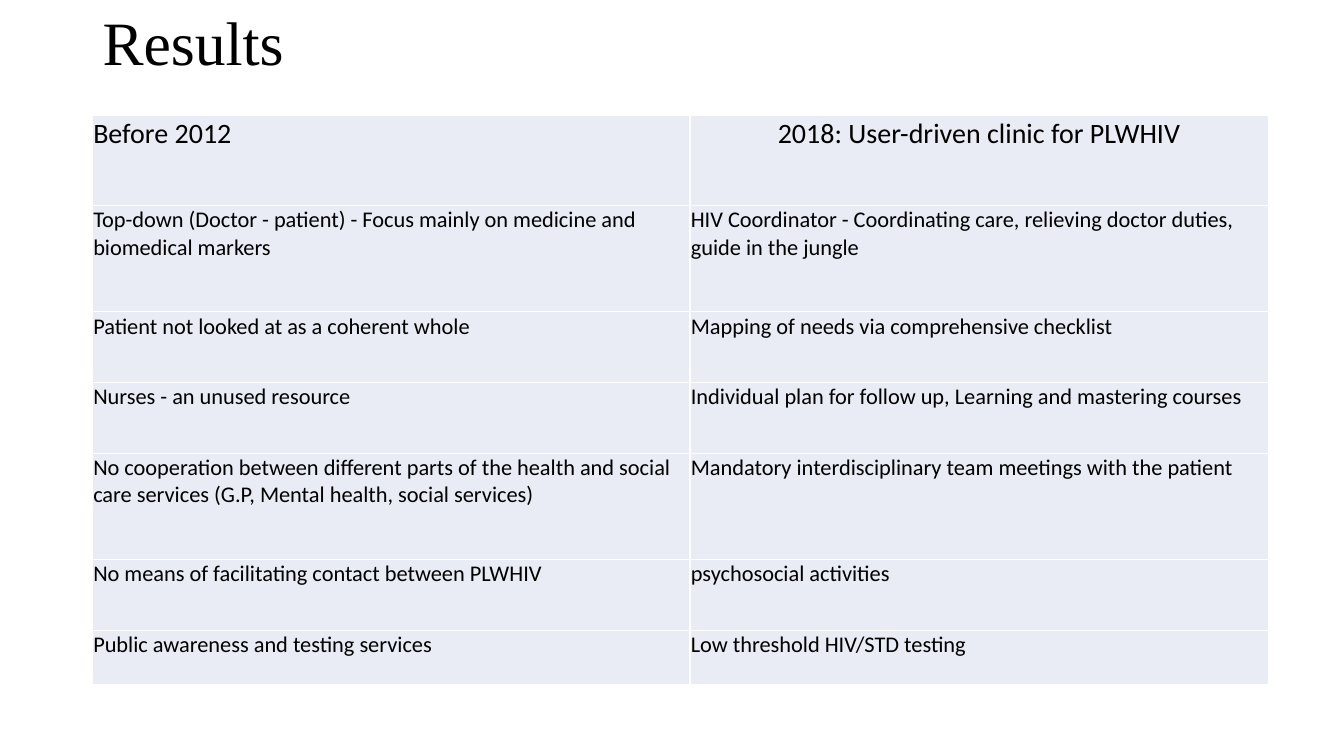
import pptx
import pptx.dml.color
import pptx.enum.text
import pptx.oxml
import pptx.oxml.ns
import pptx.util
from pptx.util import Cm

ALIGN = pptx.enum.text.PP_ALIGN
ANCHOR = pptx.enum.text.MSO_ANCHOR

COMPARISON = [
    ("Before 2012", "2018: User-driven clinic for PLWHIV"),
    ("Top-down (Doctor - patient) - Focus mainly on medicine and biomedical markers",
     "HIV Coordinator - Coordinating care, relieving doctor duties, guide in the jungle"),
    ("Patient not looked at as a coherent whole",
     "Mapping of needs via comprehensive checklist"),
    ("Nurses - an unused resource",
     "Individual plan for follow up, Learning and mastering courses"),
    ("No cooperation between different parts of the health and social care services "
     "(G.P, Mental health, social services)",
     "Mandatory interdisciplinary team meetings with the patient"),
    ("No means of facilitating contact between PLWHIV", "psychosocial activities"),
    ("Public awareness and testing services", "Low threshold HIV/STD testing"),
]
COLUMN_WIDTHS = [15.06, 14.57]
ROW_HEIGHTS = [2.26, 2.68, 1.78, 1.78, 2.68, 1.78, 1.37]


def color(hex_value):
    return pptx.dml.color.RGBColor.from_string(hex_value)


def write_text(text_frame, text, size=16, font="Calibri", fill="000000",
               align=ALIGN.LEFT, line_spacing=None):
    text_frame.word_wrap = True
    paragraph = text_frame.paragraphs[0]
    paragraph.alignment = align
    paragraph.line_spacing = line_spacing
    run = paragraph.add_run()
    run.text = text
    run.font.name = font
    run.font.size = pptx.util.Pt(size)
    run.font.bold = False
    run.font.color.rgb = color(fill)


class SlideBuilder:
    title_font = "Times New Roman"
    cell_fill = "E9EBF5"
    border = "FFFFFF"

    def __init__(self, presentation):
        self.slide = presentation.slides.add_slide(presentation.slide_layouts[5])

    def title(self, text, left, top, width, height):
        shape = self.slide.shapes.title
        shape.left, shape.top, shape.width, shape.height = map(Cm, (left, top, width, height))
        shape.text_frame.auto_size = pptx.enum.text.MSO_AUTO_SIZE.NONE
        shape.text_frame.vertical_anchor = ANCHOR.MIDDLE
        write_text(shape.text_frame, text, size=44, font=self.title_font, line_spacing=0.9)

    def cell_borders(self, cell):
        properties = cell._tc.get_or_add_tcPr()
        for side in ("lnL", "lnR", "lnT", "lnB"):
            properties.append(pptx.oxml.parse_xml(
                f'<a:{side} {pptx.oxml.ns.nsdecls("a")} w="12700"><a:solidFill>'
                f'<a:srgbClr val="{self.border}"/></a:solidFill></a:{side}>'))

    def table(self, rows, left, top, column_widths, row_heights):
        table = self.slide.shapes.add_table(
            len(rows), len(column_widths), Cm(left), Cm(top),
            Cm(sum(column_widths)), Cm(sum(row_heights))).table
        table.first_row = table.horz_banding = False
        for column, width in zip(table.columns, column_widths):
            column.width = Cm(width)
        for row, height in zip(table.rows, row_heights):
            row.height = Cm(height)
        for row_index, texts in enumerate(rows):
            is_header = row_index == 0
            for column_index, text in enumerate(texts):
                cell = table.cell(row_index, column_index)
                cell.margin_left = cell.margin_right = cell.margin_top = Cm(0.02)
                cell.margin_bottom = 0
                cell.vertical_anchor = ANCHOR.TOP
                self.cell_borders(cell)
                cell.fill.solid()
                cell.fill.fore_color.rgb = color(self.cell_fill)
                centred = is_header and column_index == 1
                write_text(cell.text_frame, text, size=20 if is_header else 16,
                           align=ALIGN.CENTER if centred else ALIGN.LEFT)


def main():
    presentation = pptx.Presentation()
    presentation.slide_width, presentation.slide_height = Cm(33.87), Cm(19.05)
    builder = SlideBuilder(presentation)

    # Heading
    builder.title("Results", 2.33, 0, 29.21, 2.31)

    # Comparison before and after
    builder.table(COMPARISON, 2.33, 2.92, COLUMN_WIDTHS, ROW_HEIGHTS)

    presentation.save("out.pptx")


if __name__ == "__main__":
    main()
